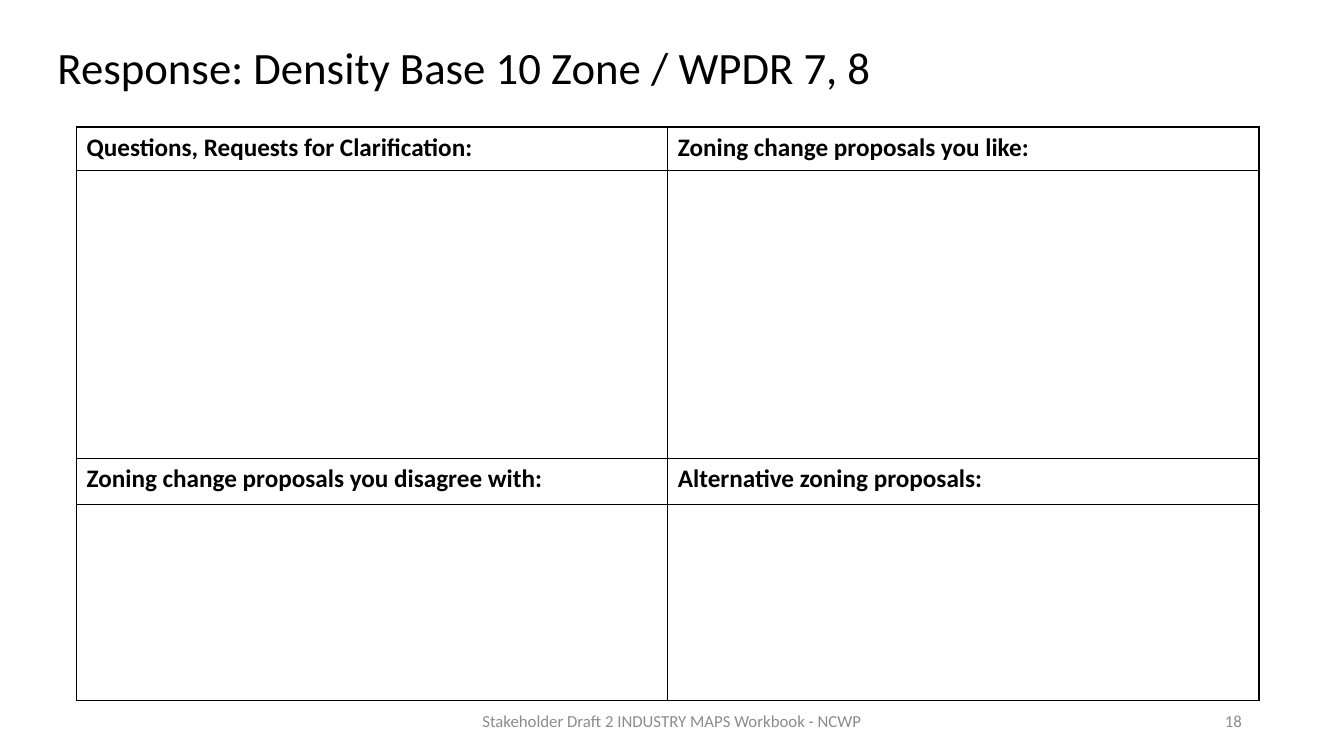
import pptx
import pptx.util
import pptx.dml.color
import pptx.enum.text
import pptx.oxml
import pptx.oxml.ns
from pptx.util import Cm

COLORS = {"ink": "000000", "muted": "8C8C8C"}
ALIGN = pptx.enum.text.PP_ALIGN
ANCHOR = pptx.enum.text.MSO_ANCHOR

TITLE = {"size": pptx.util.Pt(32), "name": "Calibri"}
HEADING = {"size": pptx.util.Pt(18), "name": "Calibri", "bold": True}
FOOTER = {"size": pptx.util.Pt(12), "name": "Calibri"}

PROMPTS = [
    ("Questions, Requests for Clarification:", "Zoning change proposals you like:"),
    ("Zoning change proposals you disagree with:", "Alternative zoning proposals:"),
]
ROW_HEIGHTS = [1.1, 7.26, 1.15, 4.94]


def write(para, text, font_format, color):
    span = para.add_run()
    span.text = text
    for name, value in font_format.items():
        setattr(span.font, name, value)
    span.font.color.rgb = pptx.dml.color.RGBColor.from_string(COLORS[color])


def add_text(page, box, text, font_format, color, para_format):
    frame = page.shapes.add_textbox(*(Cm(length) for length in box)).text_frame
    frame.word_wrap = True
    frame.vertical_anchor = ANCHOR.MIDDLE
    para = frame.paragraphs[0]
    for name, value in para_format.items():
        setattr(para, name, value)
    write(para, text, font_format, color)


def add_borders(cell, color, width):
    properties = cell._tc.get_or_add_tcPr()
    for position, side in enumerate(("lnL", "lnR", "lnT", "lnB")):
        properties.insert(position, pptx.oxml.parse_xml(
            f'<a:{side} {pptx.oxml.ns.nsdecls("a")} w="{pptx.util.Pt(width)}">'
            f'<a:solidFill><a:srgbClr val="{COLORS[color]}"/></a:solidFill></a:{side}>'))


def add_title(page, box):
    add_text(page, box, "Response: Density Base 10 Zone / WPDR 7, 8",
             TITLE, "ink", {"alignment": ALIGN.LEFT, "line_spacing": 0.9})


def add_response_table(page, box):
    left, top, width, height = (Cm(length) for length in box)
    grid = page.shapes.add_table(len(ROW_HEIGHTS), 2, left, top, width, height).table
    grid.first_row = grid.horz_banding = False
    for row, row_height in zip(grid.rows, ROW_HEIGHTS):
        row.height = Cm(row_height)
    for cell in grid.iter_cells():
        cell.fill.background()
        add_borders(cell, "ink", 1)
    # Each prompt row is followed by an empty row for answers
    for index, prompts in enumerate(PROMPTS):
        for column, prompt in enumerate(prompts):
            para = grid.cell(2 * index, column).text_frame.paragraphs[0]
            write(para, prompt, HEADING, "ink")


def add_footer(page, box):
    left, top, width, height = box
    label_width, number_width = 11.43, 7.62
    add_text(page, (left, top, label_width, height),
             "Stakeholder Draft 2 INDUSTRY MAPS Workbook - NCWP",
             FOOTER, "muted", {"alignment": ALIGN.CENTER})
    add_text(page, (left + width - number_width, top, number_width, height),
             "18", FOOTER, "muted", {"alignment": ALIGN.RIGHT})


def main():
    deck = pptx.Presentation()
    deck.slide_width, deck.slide_height = Cm(33.87), Cm(19.05)
    page = deck.slides.add_slide(deck.slide_layouts[6])
    add_title(page, (1.2, 1.02, 30.35, 1.5))
    add_response_table(page, (1.93, 3.2, 29.8, sum(ROW_HEIGHTS)))
    add_footer(page, (11.22, 17.66, 20.33, 1.01))
    deck.save("out.pptx")


if __name__ == "__main__":
    main()
